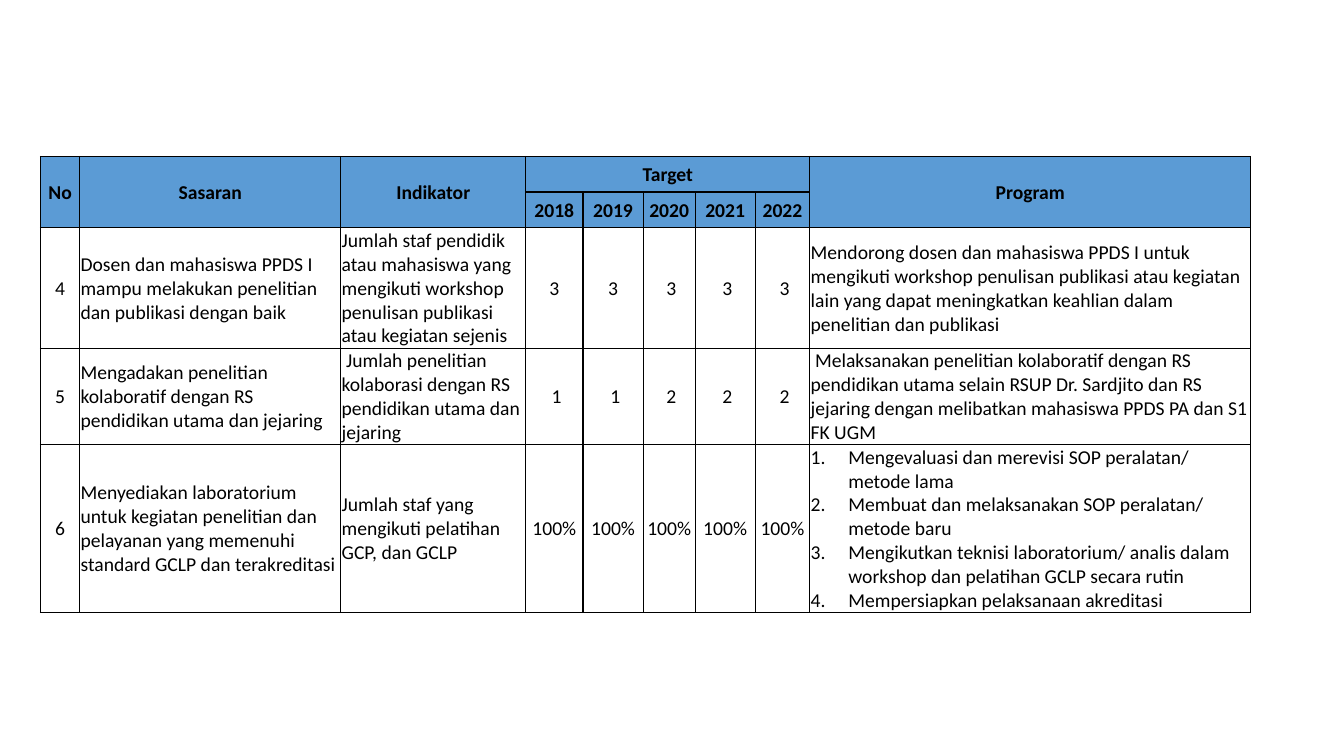
from lxml import etree
from pptx import Presentation
from pptx.dml.color import RGBColor
from pptx.enum.text import MSO_ANCHOR, PP_ALIGN
from pptx.oxml.ns import qn
from pptx.util import Cm, Pt

MIDDLE = MSO_ANCHOR.MIDDLE
CENTER, LEFT = PP_ALIGN.CENTER, PP_ALIGN.LEFT

COLORS = {"header": "5B9BD5", "text": "000000", "border": "000000"}
FONT_NAME = "Calibri"
FONT_SIZE = Pt(14)
INDENT = Cm(0.95)

COLUMN_WIDTHS = [0.99, 6.58, 4.66, 1.44, 1.52, 1.31, 1.51, 1.38, 11.11]
ROW_HEIGHTS = [0.9, 0.9, 3.04, 2.4, 4.2]
LEFT_ALIGNED_COLUMNS = {1, 2, 8}
HEADER_ROWS = 2
MERGES = [
    ((0, 0), (1, 0)),
    ((0, 1), (1, 1)),
    ((0, 2), (1, 2)),
    ((0, 3), (0, 7)),
    ((0, 8), (1, 8)),
]

ROWS = [
    ["No", "Sasaran", "Indikator", "Target", "", "", "", "", "Program"],
    ["", "", "", "2018", "2019", "2020", "2021", "2022", ""],
    [
        "4",
        "Dosen dan mahasiswa PPDS I mampu melakukan penelitian dan publikasi dengan baik",
        "Jumlah staf pendidik atau mahasiswa yang mengikuti workshop penulisan publikasi "
        "atau kegiatan sejenis",
        "3", "3", " 3", " 3", " 3",
        "Mendorong dosen dan mahasiswa PPDS I untuk mengikuti workshop penulisan publikasi "
        "atau kegiatan lain yang dapat meningkatkan keahlian dalam penelitian dan publikasi",
    ],
    [
        "5",
        "Mengadakan penelitian kolaboratif dengan RS pendidikan utama dan jejaring",
        " Jumlah penelitian kolaborasi dengan RS pendidikan utama dan jejaring",
        " 1", " 1", " 2", " 2", " 2",
        " Melaksanakan penelitian kolaboratif dengan RS pendidikan utama selain RSUP "
        "Dr. Sardjito dan RS jejaring dengan melibatkan mahasiswa PPDS PA dan S1 FK UGM",
    ],
    [
        "6",
        "Menyediakan laboratorium untuk kegiatan penelitian dan pelayanan yang memenuhi "
        "standard GCLP dan terakreditasi",
        "Jumlah staf yang mengikuti pelatihan GCP, dan GCLP",
        *["100%"] * 5,
        "Mengevaluasi dan merevisi SOP peralatan/ metode lama\n"
        "Membuat dan melaksanakan SOP peralatan/ metode baru\n"
        "Mengikutkan teknisi laboratorium/ analis dalam workshop dan pelatihan GCLP "
        "secara rutin\n"
        "Mempersiapkan pelaksanaan akreditasi",
    ],
]


def add_borders(cell):
    properties = cell._tc.get_or_add_tcPr()
    for side in ("lnL", "lnR", "lnT", "lnB"):
        line = etree.SubElement(properties, qn(f"a:{side}"), w=str(Pt(1)))
        fill = etree.SubElement(line, qn("a:solidFill"))
        etree.SubElement(fill, qn("a:srgbClr"), val=COLORS["border"])


def number_paragraph(paragraph):
    properties = paragraph._p.get_or_add_pPr()
    properties.set("marL", str(INDENT))
    properties.set("indent", str(-INDENT))
    etree.SubElement(properties, qn("a:buFont"), typeface="+mj-lt")
    etree.SubElement(properties, qn("a:buAutoNum"), type="arabicPeriod")


def format_cell(cell, text, is_header, alignment):
    add_borders(cell)
    if is_header:
        cell.fill.solid()
        cell.fill.fore_color.rgb = RGBColor.from_string(COLORS["header"])
    else:
        cell.fill.background()
    cell.margin_left = cell.margin_right = cell.margin_top = Cm(0.02)
    cell.margin_bottom = 0
    cell.vertical_anchor = MIDDLE
    cell.text_frame.text = text
    paragraphs = cell.text_frame.paragraphs
    for paragraph in paragraphs:
        if len(paragraphs) > 1:
            number_paragraph(paragraph)
        paragraph.alignment = alignment
        for span in paragraph.runs:
            span.font.name = FONT_NAME
            span.font.size = FONT_SIZE
            span.font.bold = is_header
            span.font.color.rgb = RGBColor.from_string(COLORS["text"])


def add_target_table(page, left, top):
    frame = page.shapes.add_table(
        len(ROWS), len(COLUMN_WIDTHS), left, top,
        Cm(sum(COLUMN_WIDTHS)), Cm(sum(ROW_HEIGHTS)),
    )
    table = frame.table
    table.horz_banding = False
    for column, width in zip(table.columns, COLUMN_WIDTHS):
        column.width = Cm(width)
    for row, height in zip(table.rows, ROW_HEIGHTS):
        row.height = Cm(height)
    for row_index, texts in enumerate(ROWS):
        is_header = row_index < HEADER_ROWS
        for column_index, text in enumerate(texts):
            left_aligned = not is_header and column_index in LEFT_ALIGNED_COLUMNS
            format_cell(
                table.cell(row_index, column_index), text, is_header,
                LEFT if left_aligned else CENTER,
            )
    for first, last in MERGES:
        table.cell(*first).merge(table.cell(*last))


def main():
    deck = Presentation()
    deck.slide_width, deck.slide_height = Cm(33.87), Cm(19.05)
    page = deck.slides.add_slide(deck.slide_layouts[6])
    add_target_table(page, Cm(1.02), Cm(3.94))
    deck.save("out.pptx")


if __name__ == "__main__":
    main()
